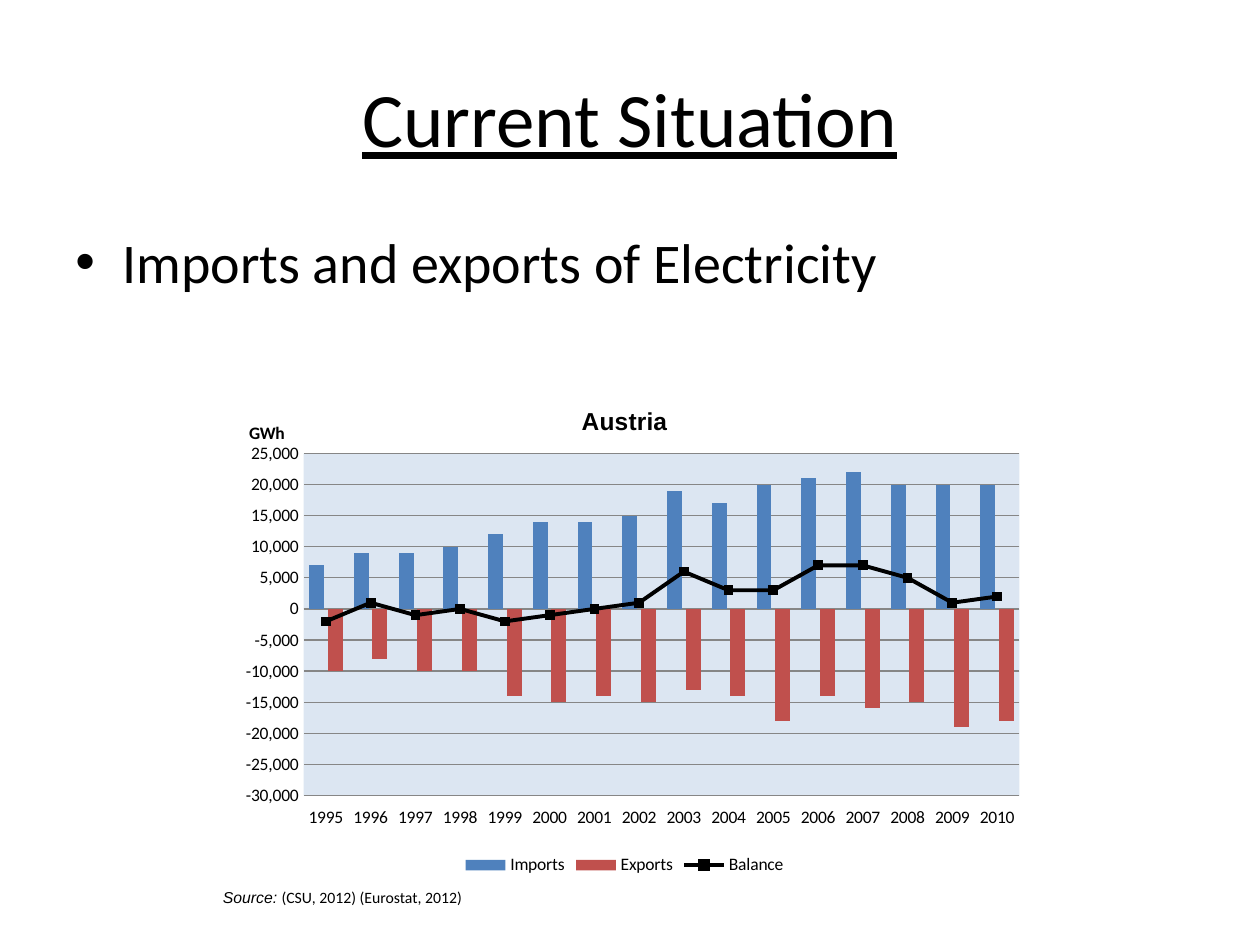
from copy import deepcopy

from pptx import Presentation
from pptx.chart.data import CategoryChartData
from pptx.dml.color import RGBColor
from pptx.enum.chart import (XL_CHART_TYPE, XL_LEGEND_POSITION, XL_MARKER_STYLE,
                             XL_TICK_LABEL_POSITION, XL_TICK_MARK)
from pptx.enum.text import MSO_ANCHOR, PP_ALIGN
from pptx.oxml import parse_xml
from pptx.oxml.ns import nsdecls, qn
from pptx.util import Pt

PX = 914400 / 126
COLUMN = XL_CHART_TYPE.COLUMN_CLUSTERED
BOTTOM = XL_LEGEND_POSITION.BOTTOM
SQUARE = XL_MARKER_STYLE.SQUARE
LOW = XL_TICK_LABEL_POSITION.LOW
NO_TICK = XL_TICK_MARK.NONE
TOP, MIDDLE = MSO_ANCHOR.TOP, MSO_ANCHOR.MIDDLE
LEFT, CENTER = PP_ALIGN.LEFT, PP_ALIGN.CENTER

BLACK, GREY, PALE_BLUE = "000000", "868686", "DCE6F2"
YEARS = [str(year) for year in range(1995, 2011)]
THOUSANDS = {
    "Imports": [7, 9, 9, 10, 12, 14, 14, 15, 19, 17, 20, 21, 22, 20, 20, 20],
    "Exports": [-10, -8, -10, -10, -14, -15, -14, -15, -13, -14, -18, -14, -16, -15, -19, -18],
    "Balance": [-2, 1, -1, 0, -2, -1, 0, 1, 6, 3, 3, 7, 7, 5, 1, 2],
}
BAR_COLORS = ["4F81BD", "C0504D"]


def px(n):
    return round(n * PX)


def rgb(value):
    return RGBColor.from_string(value)


def fill(fmt, color):
    fmt.fill.solid()
    fmt.fill.fore_color.rgb = rgb(color)


def stroke(line, color, width):
    line.color.rgb = rgb(color)
    line.width = Pt(width)


def style(font, size, name="Calibri", color=BLACK, bold=False, italic=False, underline=False):
    font.size = Pt(size)
    font.name = name
    font.color.rgb = rgb(color)
    font.bold, font.italic, font.underline = bold, italic, underline


def add_text(p, text, **fmt):
    r = p.add_run()
    r.text = text
    style(r.font, **fmt)


def add_box(slide, x, y, w, h, anchor=TOP, align=LEFT, wrap=True):
    tf = slide.shapes.add_textbox(px(x), px(y), px(w), px(h)).text_frame
    tf.word_wrap = wrap
    tf.vertical_anchor = anchor
    p = tf.paragraphs[0]
    p.alignment = align
    return tf, p


def add_bullet(p, indent):
    pPr = p._p.get_or_add_pPr()
    pPr.set("marL", str(px(indent)))
    pPr.set("indent", str(-px(indent)))
    pPr.append(parse_xml(f'<a:buFont {nsdecls("a")} typeface="Arial"/>'))
    pPr.append(parse_xml(f'<a:buChar {nsdecls("a")} char="•"/>'))


def set_layout(parent, inner=False, **place):
    old = parent.find(qn("c:layout"))
    at = 0 if old is None else parent.index(old)
    if old is not None:
        parent.remove(old)
    target = '<c:layoutTarget val="inner"/>' if inner else ""
    modes = "".join(f'<c:{k}Mode val="edge"/>' for k in "xy")
    values = "".join(f'<c:{k} val="{v}"/>' for k, v in place.items())
    parent.insert(at, parse_xml(
        f'<c:layout {nsdecls("c")}><c:manualLayout>{target}{modes}{values}'
        '</c:manualLayout></c:layout>'))


def move_last_series_to_line(plot_area):
    bar = plot_area.find(qn("c:barChart"))
    ser = bar.findall(qn("c:ser"))[-1]
    for invert in ser.findall(qn("c:invertIfNegative")):
        ser.remove(invert)
    line = parse_xml(
        f'<c:lineChart {nsdecls("c")}><c:grouping val="standard"/>'
        '<c:varyColors val="0"/><c:marker val="1"/></c:lineChart>')
    line.insert(2, ser)
    for ax_id in bar.findall(qn("c:axId")):
        line.append(deepcopy(ax_id))
    bar.addnext(line)


def style_axes(chart):
    cat, val = chart.category_axis, chart.value_axis
    cat.tick_label_position = LOW
    for axis in (cat, val):
        axis.major_tick_mark = axis.minor_tick_mark = NO_TICK
    stroke(cat.format.line, GREY, 0.75)
    val.format.line.fill.background()
    val.minimum_scale, val.maximum_scale, val.major_unit = -30000, 25000, 5000
    val.has_major_gridlines = True
    stroke(val.major_gridlines.format.line, GREY, 0.75)
    val.tick_labels.number_format = "#,##0"
    val.tick_labels.number_format_is_linked = False
    tf = val.axis_title.text_frame
    add_text(tf.paragraphs[0], "GWh", size=10, bold=True)
    tf._txBody.bodyPr.set("rot", "0")
    tf._txBody.bodyPr.set("vert", "horz")
    set_layout(val.axis_title._element, x=0.04, y=0.07)


def style_series(chart):
    bars, lines = chart.plots
    bars.gap_width, bars.overlap = 75, -25
    bars.vary_by_categories = False
    for series, color in zip(bars.series, BAR_COLORS):
        series.invert_if_negative = False
        fill(series.format, color)
    balance = lines.series[0]
    balance.smooth = False
    stroke(balance.format.line, BLACK, 2.25)
    balance.marker.style, balance.marker.size = SQUARE, 5
    fill(balance.marker.format, BLACK)
    stroke(balance.marker.format.line, BLACK, 0.75)


def add_trade_chart(slide, x, y, w, h):
    data = CategoryChartData()
    data.categories = YEARS
    for name, values in THOUSANDS.items():
        data.add_series(name, [v * 1000 for v in values])
    chart = slide.shapes.add_chart(COLUMN, px(x), px(y), px(w), px(h), data).chart
    style(chart.font, 10)
    chart.has_title = True
    add_text(chart.chart_title.text_frame.paragraphs[0], "Austria",
             size=14, name="Arial", bold=True)
    chart.has_legend = True
    chart.legend.position = BOTTOM
    chart.legend.include_in_layout = False
    plot_area = chart._chartSpace.find(qn("c:chart")).find(qn("c:plotArea"))
    move_last_series_to_line(plot_area)
    style_series(chart)
    style_axes(chart)
    set_layout(plot_area, inner=True, x=0.11, y=0.14, w=0.87, h=0.69)
    plot_area.append(parse_xml(
        f'<c:spPr {nsdecls("c", "a")}><a:solidFill><a:srgbClr val="{PALE_BLUE}"/>'
        '</a:solidFill><a:ln><a:noFill/></a:ln></c:spPr>'))


def main():
    prs = Presentation()
    prs.slide_width, prs.slide_height = px(1260), px(945)
    slide = prs.slides.add_slide(prs.slide_layouts[6])

    add_trade_chart(slide, 213, 384, 823, 496)

    _, p = add_box(slide, 63, 38, 1134, 158, anchor=MIDDLE, align=CENTER)
    add_text(p, "Current Situation", size=44, underline=True)

    _, p = add_box(slide, 63, 221, 1134, 624)
    add_bullet(p, 47)
    add_text(p, "Imports and exports of Electricity", size=32)

    tf, p = add_box(slide, 223, 881, 253, 32, anchor=MIDDLE, wrap=False)
    tf.margin_left = 0
    add_text(p, "Source: ", size=9, name="Arial", italic=True)
    add_text(p, "(CSU, 2012) (Eurostat, 2012)", size=9)

    prs.save("out.pptx")


if __name__ == "__main__":
    main()
